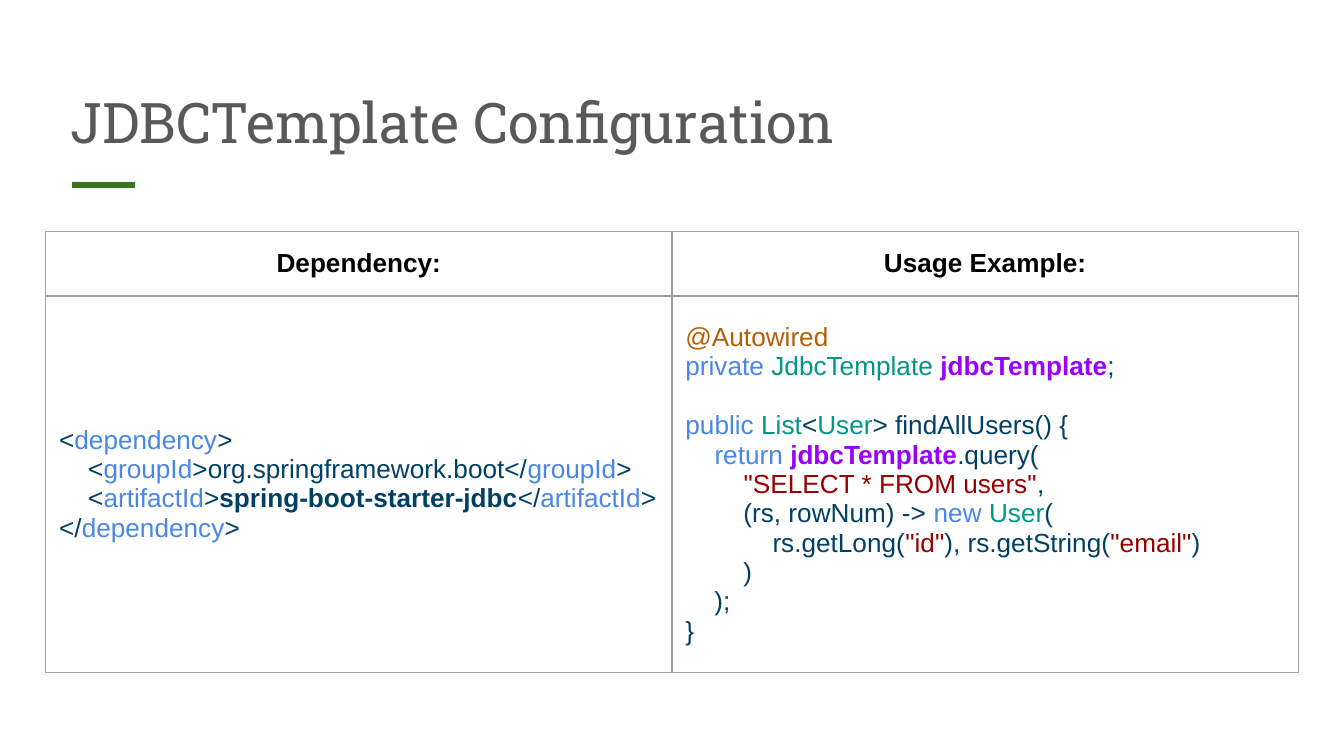
from lxml import etree
from pptx import Presentation
from pptx.dml.color import RGBColor
from pptx.enum.shapes import MSO_CONNECTOR
from pptx.enum.text import MSO_ANCHOR, MSO_AUTO_SIZE, PP_ALIGN
from pptx.oxml.ns import qn
from pptx.util import Inches, Pt

LEFT, CENTER = PP_ALIGN.LEFT, PP_ALIGN.CENTER
MIDDLE, BOTTOM = MSO_ANCHOR.MIDDLE, MSO_ANCHOR.BOTTOM
NO_FIT = MSO_AUTO_SIZE.NONE
STRAIGHT = MSO_CONNECTOR.STRAIGHT

COLORS = {
    "title": "595959",
    "accent": "38761D",
    "border": "9E9E9E",
    "heading": "000000",
    "plain": "004065",
    "strong": "004065",
    "keyword": "4A86E8",
    "type": "009688",
    "field": "9900FF",
    "string": "980000",
    "annotation": "B45F06",
}
BOLD_KINDS = {"heading", "strong", "field"}
CODE_SIZE = 14
CODE_LINE_HEIGHT = 16

DEPENDENCY = [
    [("<", "plain"), ("dependency", "keyword"), (">", "plain")],
    [("    <", "plain"), ("groupId", "keyword"),
     (">org.springframework.boot</", "plain"), ("groupId", "keyword"), (">", "plain")],
    [("    <", "plain"), ("artifactId", "keyword"), (">", "plain"),
     ("spring-boot-starter-jdbc", "strong"), ("</", "plain"),
     ("artifactId", "keyword"), (">", "plain")],
    [("</", "plain"), ("dependency", "keyword"), (">", "plain")],
]
USAGE_FIELD = [
    [("@Autowired", "annotation")],
    [("private ", "keyword"), ("JdbcTemplate ", "type"), ("jdbcTemplate", "field"),
     (";", "plain")],
]
USAGE_METHOD = [
    [("public ", "keyword"), ("List", "type"), ("<", "plain"), ("User", "type"),
     ("> findAllUsers() {", "plain")],
    [("    ", "plain"), ("return ", "keyword"), ("jdbcTemplate", "field"),
     (".query(", "plain")],
    [("        ", "plain"), ('"SELECT * FROM users"', "string"), (",", "plain")],
    [("        (rs, rowNum) -> ", "plain"), ("new ", "keyword"), ("User", "type"),
     ("(", "plain")],
    [("            rs.getLong(", "plain"), ('"id"', "string"),
     ("), rs.getString(", "plain"), ('"email"', "string"), (")", "plain")],
    [("        )", "plain")],
    [("    );", "plain")],
    [("}", "plain")],
]


def add_text(paragraph, text, *, kind, size=CODE_SIZE, font="Arial", align=LEFT):
    paragraph.alignment = align
    run = paragraph.add_run()
    run.text = text
    run.font.name = font
    run.font.size = Pt(size)
    run.font.bold = kind in BOLD_KINDS
    run.font.color.rgb = RGBColor.from_string(COLORS[kind])


class SlideBuilder:
    """Draws styled elements on one slide, with lengths in percent of its size."""

    def __init__(self, presentation):
        self.width = presentation.slide_width
        self.height = presentation.slide_height
        self.slide = presentation.slides.add_slide(presentation.slide_layouts[5])

    def across(self, percent):
        return round(self.width * percent / 100)

    def down(self, percent):
        return round(self.height * percent / 100)

    def title(self, text, left, top, width, height):
        shape = self.slide.shapes.title
        shape.left, shape.top = self.across(left), self.down(top)
        shape.width, shape.height = self.across(width), self.down(height)
        frame = shape.text_frame
        frame.word_wrap = True
        frame.auto_size = NO_FIT
        frame.vertical_anchor = BOTTOM
        frame.margin_left = frame.margin_right = Inches(0.1)
        frame.margin_top = frame.margin_bottom = Inches(0.1)
        add_text(frame.paragraphs[0], text, kind="title", size=30, font="Roboto Slab")

    def rule(self, left, right, top):
        y = self.down(top)
        line = self.slide.shapes.add_connector(
            STRAIGHT, self.across(left), y, self.across(right), y)
        line.line.width = Pt(3)
        line.line.color.rgb = RGBColor.from_string(COLORS["accent"])
        etree.SubElement(line._element.spPr, qn("a:effectLst"))

    def table(self, left, top, width, row_heights, columns):
        table = self.slide.shapes.add_table(
            len(row_heights), len(columns), self.across(left), self.down(top),
            self.across(width), self.down(sum(row_heights))).table
        table.first_row = table.horz_banding = False
        for row, height in zip(table.rows, row_heights):
            row.height = self.down(height)
        for index, (heading, blocks) in enumerate(columns):
            table.columns[index].width = self.across(width / len(columns))
            heading_cell, code_cell = table.cell(0, index), table.cell(1, index)
            self.format_cell(heading_cell)
            self.format_cell(code_cell)
            add_text(heading_cell.text_frame.paragraphs[0], heading,
                     kind="heading", align=CENTER)
            self.code(code_cell.text_frame, blocks)

    def format_cell(self, cell):
        cell.vertical_anchor = MIDDLE
        cell.margin_left = cell.margin_right = Inches(0.1)
        cell.margin_top = cell.margin_bottom = Inches(0.1)
        properties = cell._tc.get_or_add_tcPr()
        for side in ("a:lnL", "a:lnR", "a:lnT", "a:lnB"):
            border = etree.SubElement(properties, qn(side), w=str(Pt(0.75)))
            fill = etree.SubElement(border, qn("a:solidFill"))
            etree.SubElement(fill, qn("a:srgbClr"), val=COLORS["border"])
        cell.fill.background()

    def code(self, frame, blocks):
        paragraph = None
        for block in blocks:
            for number, line in enumerate(block):
                if paragraph is None:
                    paragraph = frame.paragraphs[0]
                else:
                    paragraph = frame.add_paragraph()
                    paragraph.space_before = Pt(0 if number else CODE_LINE_HEIGHT)
                for text, kind in line:
                    add_text(paragraph, text, kind=kind)


def main():
    presentation = Presentation()
    presentation.slide_width = Inches(10)
    presentation.slide_height = presentation.slide_width * 9 // 16
    builder = SlideBuilder(presentation)
    builder.title("JDBCTemplate Configuration", 4.25, 8.9, 91.5, 13.35)
    builder.rule(5.37, 10.03, 24.5)
    builder.table(3.4, 30.65, 93.2, [8.5, 49.8], [
        ("Dependency:", [DEPENDENCY]),
        ("Usage Example:", [USAGE_FIELD, USAGE_METHOD]),
    ])
    presentation.save("out.pptx")


if __name__ == "__main__":
    main()
